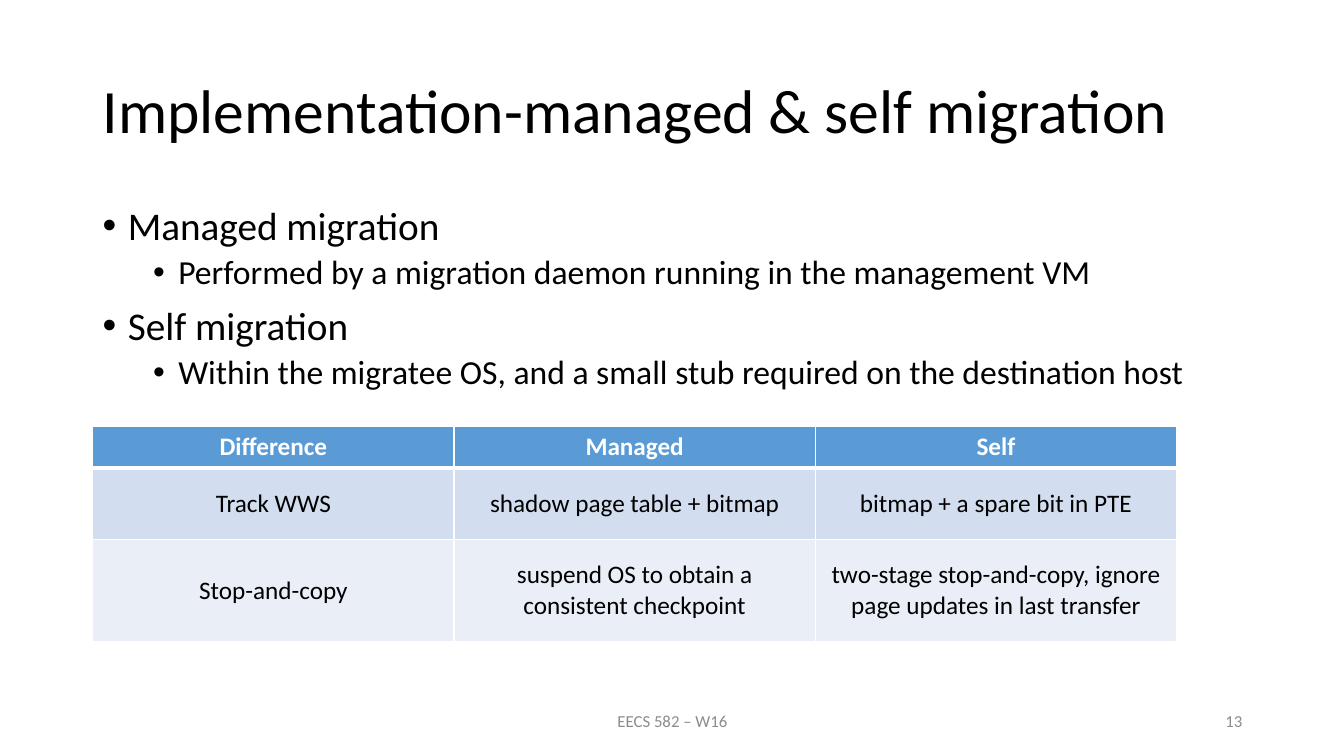
import pptx
import pptx.util
import pptx.dml.color
import pptx.enum.text
import pptx.oxml
import pptx.oxml.ns
from lxml import etree

Inches, Pt = pptx.util.Inches, pptx.util.Pt
ALIGN = pptx.enum.text.PP_ALIGN
ANCHOR = pptx.enum.text.MSO_ANCHOR

# Content
TITLE = "Implementation-managed & self migration"
BULLETS = [
    (0, "Managed migration"),
    (1, "Performed by a migration daemon running in the management VM"),
    (0, "Self migration"),
    (1, "Within the migratee OS, and a small stub required on the destination host"),
]
TABLE = [
    ("Difference", "Managed", "Self"),
    ("Track WWS", "shadow page table + bitmap", "bitmap + a spare bit in PTE"),
    ("Stop-and-copy", "suspend OS to obtain a consistent checkpoint",
     "two-stage stop-and-copy, ignore page updates in last transfer"),
]
FOOTER = "EECS 582 – W16"
PAGE_NUMBER = "13"

# Style
BLACK, WHITE, GREY = "000000", "FFFFFF", "8C8C8C"
ROW_STYLES = [(0.41, "5B9BD5"), (0.71, "D2DEEF"), (1.02, "EAEFF7")]  # height, fill
LEVEL_STYLES = [(28, 0.25, 10), (24, 0.75, 5)]  # size, indent, space before
LEFT, WIDTH = 0.92, 11.5
TABLE_TOP, TABLE_WIDTH = 4.23, 10.75


def color(hex_text):
    return pptx.dml.color.RGBColor.from_string(hex_text)


def format_paragraph(para, size, hex_text, align=ALIGN.LEFT, bold=False):
    para.alignment = align
    for span in para.runs:
        span.font.name = "Calibri"
        span.font.size = Pt(size)
        span.font.bold = bold
        span.font.color.rgb = color(hex_text)


def add_text(page, left, top, width, height, anchor):
    box = page.shapes.add_textbox(Inches(left), Inches(top), Inches(width), Inches(height))
    box.text_frame.word_wrap = True
    box.text_frame.vertical_anchor = anchor
    return box.text_frame


def add_bullet(para, indent):
    properties = para._p.get_or_add_pPr()
    properties.set("marL", str(Inches(indent)))
    properties.set("indent", str(Inches(-0.25)))
    for tag, name, value in (("a:buFont", "typeface", "Arial"), ("a:buChar", "char", "•")):
        etree.SubElement(properties, pptx.oxml.ns.qn(tag)).set(name, value)


def set_borders(cell, bottom_width):
    properties = cell._tc.get_or_add_tcPr()
    widths = {"lnL": 1, "lnR": 1, "lnT": 1, "lnB": bottom_width}
    for position, (tag, width) in enumerate(widths.items()):
        properties.insert(position, pptx.oxml.parse_xml(
            f'<a:{tag} {pptx.oxml.ns.nsdecls("a")} w="{Pt(width)}"><a:solidFill>'
            f'<a:srgbClr val="{WHITE}"/></a:solidFill></a:{tag}>'))


deck = pptx.Presentation()
deck.slide_width, deck.slide_height = Inches(13.33), Inches(7.5)
page = deck.slides.add_slide(deck.slide_layouts[5])

# Title
title = page.shapes.title
title.left, title.top = Inches(LEFT), Inches(0.4)
title.width, title.height = Inches(WIDTH), Inches(1.45)
title.text_frame.text = TITLE
title.text_frame.vertical_anchor = ANCHOR.MIDDLE
title.text_frame.auto_size = pptx.enum.text.MSO_AUTO_SIZE.NONE
title.text_frame.paragraphs[0].line_spacing = 0.9
format_paragraph(title.text_frame.paragraphs[0], 44, BLACK)

# Bullets
body = add_text(page, LEFT, 2, WIDTH, 1.94, ANCHOR.TOP)
for number, (level, text) in enumerate(BULLETS):
    size, indent, space = LEVEL_STYLES[level]
    para = body.add_paragraph() if number else body.paragraphs[0]
    para.text = text
    para.level = level
    para.line_spacing = 0.9
    para.space_before = Pt(space if number else 0)
    add_bullet(para, indent)
    format_paragraph(para, size, BLACK)

# Comparison table
table = page.shapes.add_table(
    len(TABLE), len(TABLE[0]), Inches(LEFT), Inches(TABLE_TOP), Inches(TABLE_WIDTH),
    Inches(sum(height for height, fill in ROW_STYLES))).table
for column in table.columns:
    column.width = Inches(TABLE_WIDTH / len(TABLE[0]))
for row_number, (texts, (height, fill)) in enumerate(zip(TABLE, ROW_STYLES)):
    header = row_number == 0
    table.rows[row_number].height = Inches(height)
    for column_number, text in enumerate(texts):
        cell = table.cell(row_number, column_number)
        cell.text_frame.text = text
        cell.vertical_anchor = ANCHOR.MIDDLE
        cell.fill.solid()
        cell.fill.fore_color.rgb = color(fill)
        set_borders(cell, 3 if header else 1)
        if row_number == 1:
            cell._tc.tcPr.find(pptx.oxml.ns.qn("a:lnT")).set("w", str(Pt(3)))
        format_paragraph(cell.text_frame.paragraphs[0], 18,
                         WHITE if header else BLACK, ALIGN.CENTER, header)

# Footer and page number
for text, left, width, align in ((FOOTER, 4.42, 4.5, ALIGN.CENTER),
                                 (PAGE_NUMBER, 9.42, 3, ALIGN.RIGHT)):
    frame = add_text(page, left, 6.95, width, 0.4, ANCHOR.MIDDLE)
    frame.text = text
    format_paragraph(frame.paragraphs[0], 12, GREY, align)

deck.save("out.pptx")
